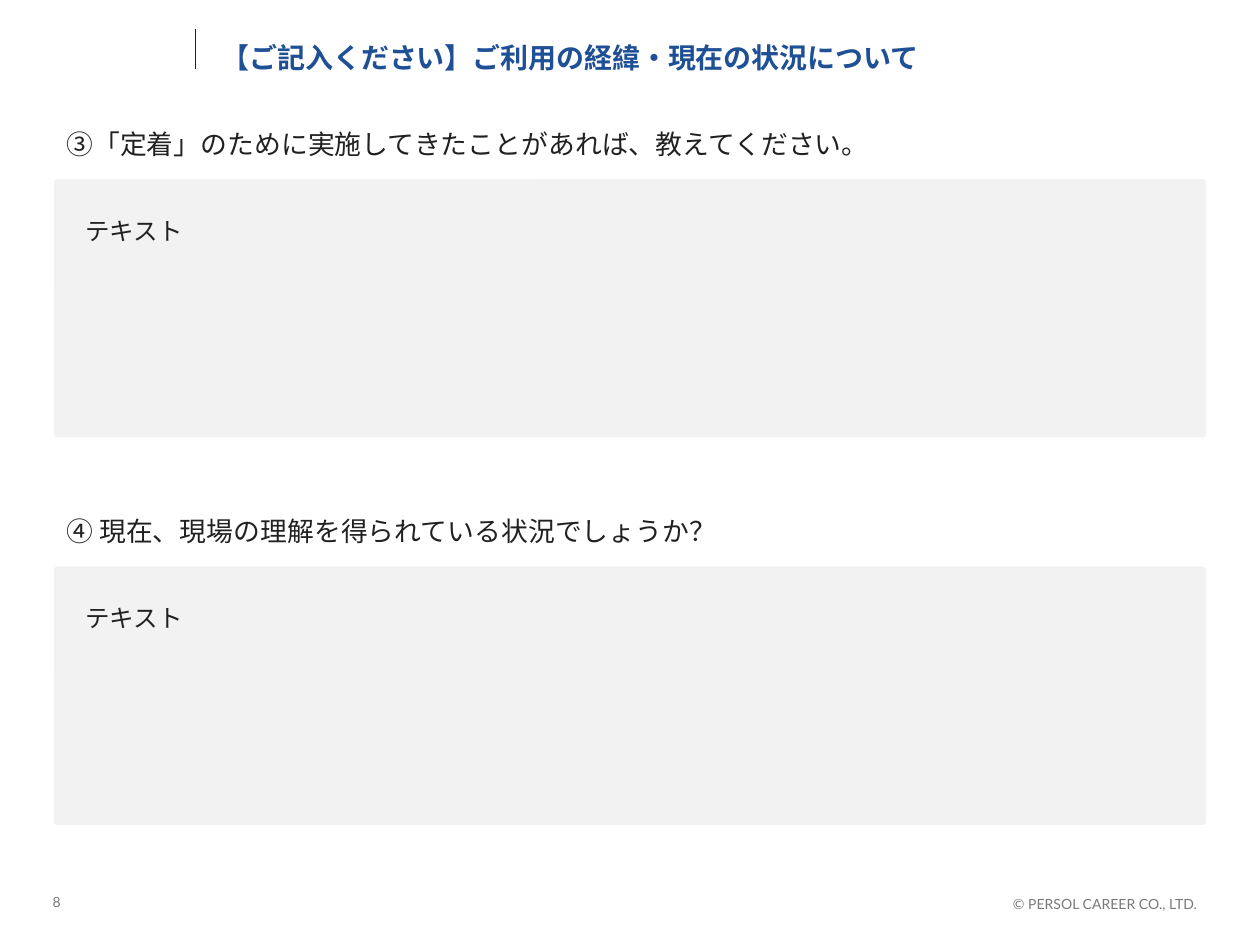
from lxml.etree import SubElement
from pptx import Presentation
from pptx.dml.color import RGBColor
from pptx.enum.shapes import MSO_CONNECTOR, MSO_SHAPE
from pptx.enum.text import MSO_ANCHOR, MSO_AUTO_SIZE, PP_ALIGN
from pptx.oxml.ns import qn
from pptx.util import Cm, Pt

# Content
TITLE = "【ご記入ください】ご利用の経緯・現在の状況について"
QUESTIONS = [
    ("③「定着」のために実施してきたことがあれば、教えてください。", "テキスト"),
    ("④ 現在、現場の理解を得られている状況でしょうか？", "テキスト"),
]
PAGE_NUMBER = "8"
COPYRIGHT = "© PERSOL CAREER CO., LTD."

# Style and layout (cm)
JAPANESE, LATIN = "Noto Sans CJK JP", "Lato"
BLUE, INK, GREY, PANEL, RULE = "1F5095", "212121", "797979", "F2F2F2", "202020"
LEFT, WIDTH = 1.09, 23.22
FIRST_TOP, PITCH = 2.31, 7.81
PANEL_OFFSET, PANEL_HEIGHT = 1.3, 5.21
ANSWER_INSET, ANSWER_OFFSET, ANSWER_HEIGHT = 0.38, 1.73, 4.29


def color(hex_value):
    return RGBColor.from_string(hex_value)


def write(box, text, size, font_name, ink, spacing=1.0, bold=False,
          align=PP_ALIGN.LEFT, anchor=MSO_ANCHOR.TOP, inset_top=0.13):
    frame = box.text_frame
    frame.word_wrap = True
    frame.auto_size = MSO_AUTO_SIZE.NONE
    frame.vertical_anchor = anchor
    frame.margin_left = frame.margin_right = Cm(0.25)
    frame.margin_top, frame.margin_bottom = Cm(inset_top), Cm(0.13)
    frame.text = text
    paragraph = frame.paragraphs[0]
    paragraph.alignment = align
    paragraph.line_spacing = spacing
    font = paragraph.font
    font.size, font.bold, font.name = Pt(size), bold, font_name
    font.color.rgb = color(ink)
    # East Asian characters take their typeface from a:ea
    properties = paragraph._p.pPr.find(qn("a:defRPr"))
    SubElement(properties, qn("a:ea")).set("typeface", font_name)


def add_text(slide, left, top, width, height, *args, **options):
    box = slide.shapes.add_textbox(Cm(left), Cm(top), Cm(width), Cm(height))
    write(box, *args, **options)


def add_panel(slide, top):
    panel = slide.shapes.add_shape(MSO_SHAPE.ROUNDED_RECTANGLE, Cm(LEFT),
                                   Cm(top), Cm(WIDTH), Cm(PANEL_HEIGHT))
    panel.adjustments[0] = 0.013
    panel.shadow.inherit = False
    panel.fill.solid()
    panel.fill.fore_color.rgb = color(PANEL)
    panel.line.fill.background()


def main():
    deck = Presentation()
    deck.slide_width, deck.slide_height = Cm(25.4), Cm(19.05)
    slide = deck.slides.add_slide(deck.slide_layouts[5])

    # Title with the rule to its left
    title = slide.shapes.title
    title.left, title.top = Cm(4.22), Cm(0.61)
    title.width, title.height = Cm(20.09), Cm(1.02)
    write(title, TITLE, 16, JAPANESE, BLUE, spacing=1.3, bold=True, inset_top=0)
    rule = slide.shapes.add_connector(MSO_CONNECTOR.STRAIGHT, Cm(3.94), Cm(0.58),
                                      Cm(3.94), Cm(1.4))
    rule.line.width = Pt(0.5)
    rule.line.color.rgb = color(RULE)
    SubElement(rule._element.spPr, qn("a:effectLst"))

    # Questions, each above its answer panel
    for index, (question, answer) in enumerate(QUESTIONS):
        top = FIRST_TOP + index * PITCH
        add_panel(slide, top + PANEL_OFFSET)
        add_text(slide, LEFT, top, WIDTH, 1.02,
                 question, 15.3, JAPANESE, INK, spacing=1.2)
        add_text(slide, LEFT + ANSWER_INSET, top + ANSWER_OFFSET,
                 WIDTH - 2 * ANSWER_INSET, ANSWER_HEIGHT,
                 answer, 14, JAPANESE, INK, spacing=1.3)

    # Footer
    add_text(slide, 0.81, 17.96, 4.19, 0.46, PAGE_NUMBER, 8, LATIN, GREY,
             anchor=MSO_ANCHOR.MIDDLE)
    add_text(slide, 18.19, 17.91, 6.2, 0.61, COPYRIGHT, 8, LATIN, GREY,
             align=PP_ALIGN.RIGHT, anchor=MSO_ANCHOR.MIDDLE)

    deck.save("out.pptx")


if __name__ == "__main__":
    main()
